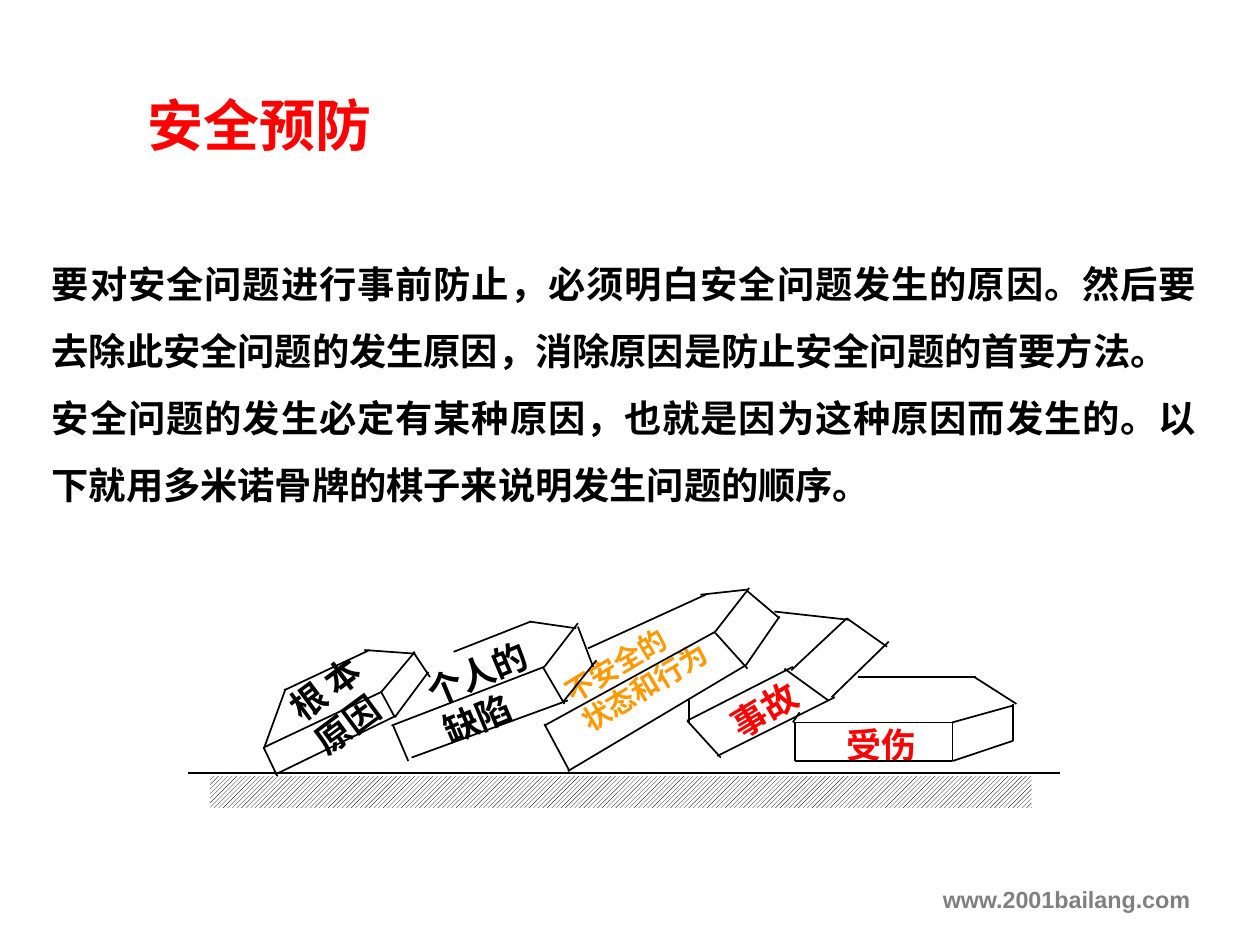
from dataclasses import dataclass

from lxml import etree
from pptx import Presentation
from pptx.dml.color import RGBColor
from pptx.enum.dml import MSO_PATTERN
from pptx.enum.shapes import MSO_CONNECTOR, MSO_SHAPE
from pptx.enum.text import MSO_ANCHOR, PP_ALIGN
from pptx.oxml.ns import qn
from pptx.util import Pt

LEFT, RIGHT, FULL = PP_ALIGN.LEFT, PP_ALIGN.RIGHT, PP_ALIGN.JUSTIFY
TOP, MIDDLE = MSO_ANCHOR.TOP, MSO_ANCHOR.MIDDLE
STRAIGHT = MSO_CONNECTOR.STRAIGHT
RECT = MSO_SHAPE.RECTANGLE
HATCH = MSO_PATTERN.LIGHT_UPWARD_DIAGONAL

HAN, LATIN = "Noto Sans CJK SC", "Arial"
COLORS = {
    "black": "000000",
    "white": "FFFFFF",
    "red": "FF0000",
    "orange": "FF9900",
    "grey": "808080",
}
LEADING = 1.2  # line height as a multiple of the font size

Line = tuple[float, float, float, float]


@dataclass
class Label:
    text: str
    left: float
    top: float
    width: float
    height: float
    size: float
    color: str = "black"
    align: PP_ALIGN = FULL
    turn: float = 0
    font: str = HAN
    anchor: MSO_ANCHOR = TOP
    spacing: float = 1


LABELS = [
    Label("www.2001bailang.com", 0, 375.8, 517, 18.7, 10, "grey", RIGHT, font=LATIN),
    Label("安全预防", 56.2, 35.3, 238.3, 36.7, 24, "red", LEFT),
    Label("根本原因", 118.8, 281.5, 47.5, 35.3, 15, turn=323.4),
    Label("个人的\n缺陷", 178.6, 274.3, 63.4, 44.6, 15, turn=337.3),
    Label("不安全的\n状态和行为", 234.7, 269.3, 78.5, 33.8, 12, "orange", turn=328.8),
    Label("事故", 303.8, 291.6, 45.4, 18.7, 15, "red", turn=328.9),
    Label("受伤", 355.7, 306.7, 45.4, 18.7, 15, "red"),
    Label(
        "要对安全问题进行事前防止，必须明白安全问题发生的原因。然后要去除此安全问题的发生原因，"
        "消除原因是防止安全问题的首要方法。\n"
        "安全问题的发生必定有某种原因，也就是因为这种原因而发生的。"
        "以下就用多米诺骨牌的棋子来说明发生问题的顺序。",
        15.1, 97.9, 505.4, 123.8, 16, anchor=MIDDLE, spacing=1.5,
    ),
]

# Edges of each domino, as x1, y1, x2, y2
EDGES: dict[str, list[Line]] = {
    "root": [
        (113, 320.4, 163.4, 296.6), (163.4, 296.6, 169.2, 307.4),
        (113, 320.4, 118.8, 332.6), (118.1, 331.9, 169.9, 306.7),
        (163.4, 296.6, 177.8, 279.4), (169.2, 307.4, 183.6, 288),
        (177.1, 279.4, 184.3, 290.2), (177.1, 280.1, 156.2, 278.6),
        (158.4, 278.6, 121.7, 295.9), (122.4, 295.2, 113, 321.1),
    ],
    "person": [
        (194.4, 279.4, 227.5, 266.4), (167.8, 311, 233.3, 285.8),
        (168.5, 311, 175, 326.2), (176.4, 324.7, 243.4, 300.2),
        (232.6, 285.8, 241.9, 301.7), (233.3, 285.8, 247.7, 267.1),
        (241.2, 301, 255.6, 283), (247.7, 268.6, 254.2, 285.8),
        (226.8, 266.4, 247, 269.3),
    ],
    "unsafe": [
        (233.3, 311, 306.7, 270.7), (233.3, 310.3, 244.1, 330.5),
        (243.4, 330.5, 319.7, 285.1), (306.7, 271.4, 320.4, 286.6),
        (306, 271.4, 321.1, 252), (319.7, 285.1, 334.1, 264.2),
        (320.4, 253.4, 334.1, 265), (320.4, 252.7, 300.2, 254.9),
        (302.4, 254.9, 252, 277.9),
    ],
    "mishap": [
        (294.5, 308.9, 308.9, 324.7), (294.5, 308.9, 339.8, 285.8),
        (307.4, 324, 357.8, 298.8), (336.2, 286.6, 355, 300.2),
        (339.1, 287.3, 362.9, 265), (356.4, 298.8, 380.9, 275),
        (362.9, 265, 380.2, 277.2), (331.9, 262.1, 364.3, 265.7),
        (295.2, 300.2, 295.2, 309.6),
    ],
    "injury": [
        (340.6, 309.6, 340.6, 326.2), (340.6, 326.2, 408.2, 326.2),
        (340.6, 309.6, 408.2, 309.6), (408.2, 309.6, 408.2, 326.2),
        (339.8, 309.6, 342.7, 305.3), (367.9, 290.2, 418.3, 290.2),
        (408.2, 309.6, 434.2, 302.4), (417.6, 290.2, 435.6, 301.7),
        (434.2, 301.7, 434.2, 317.5), (408.2, 326.2, 434.2, 317.5),
    ],
    "ground": [(80.6, 331.2, 454.3, 331.2)],
}


def rgb(name: str) -> RGBColor:
    return RGBColor.from_string(COLORS[name])


def draw_label(shapes, label: Label) -> None:
    box = shapes.add_textbox(
        Pt(label.left), Pt(label.top), Pt(label.width), Pt(label.height)
    )
    box.rotation = label.turn
    frame = box.text_frame
    frame.word_wrap = True
    frame.vertical_anchor = label.anchor
    frame.text = label.text
    for para in frame.paragraphs:
        para.alignment = label.align
        para.line_spacing = Pt(label.size * LEADING * label.spacing)
        for run in para.runs:
            font = run.font
            font.name, font.size, font.bold = label.font, Pt(label.size), True
            font.color.rgb = rgb(label.color)
            east = etree.SubElement(run._r.get_or_add_rPr(), qn("a:ea"))
            east.set("typeface", label.font)


def draw_edge(shapes, edge: Line) -> None:
    line = shapes.add_connector(STRAIGHT, *map(Pt, edge))
    line.line.color.rgb = rgb("black")
    line.line.width = Pt(0.75)
    etree.SubElement(line._element.spPr, qn("a:effectLst"))


def draw_soil(shapes) -> None:
    """Draw the hatched strip under the ground line."""
    soil = shapes.add_shape(RECT, Pt(90), Pt(332.6), Pt(352.1), Pt(13.7))
    soil.shadow.inherit = False
    soil.line.fill.background()
    soil.fill.patterned()
    soil.fill.pattern = HATCH
    soil.fill.fore_color.rgb = rgb("black")
    soil.fill.back_color.rgb = rgb("white")


def main() -> None:
    deck = Presentation()
    deck.slide_width, deck.slide_height = Pt(540), Pt(405)
    shapes = deck.slides.add_slide(deck.slide_layouts[6]).shapes
    for label in LABELS:
        draw_label(shapes, label)
    for edges in EDGES.values():
        for edge in edges:
            draw_edge(shapes, edge)
    draw_soil(shapes)
    deck.save("out.pptx")


if __name__ == "__main__":
    main()
